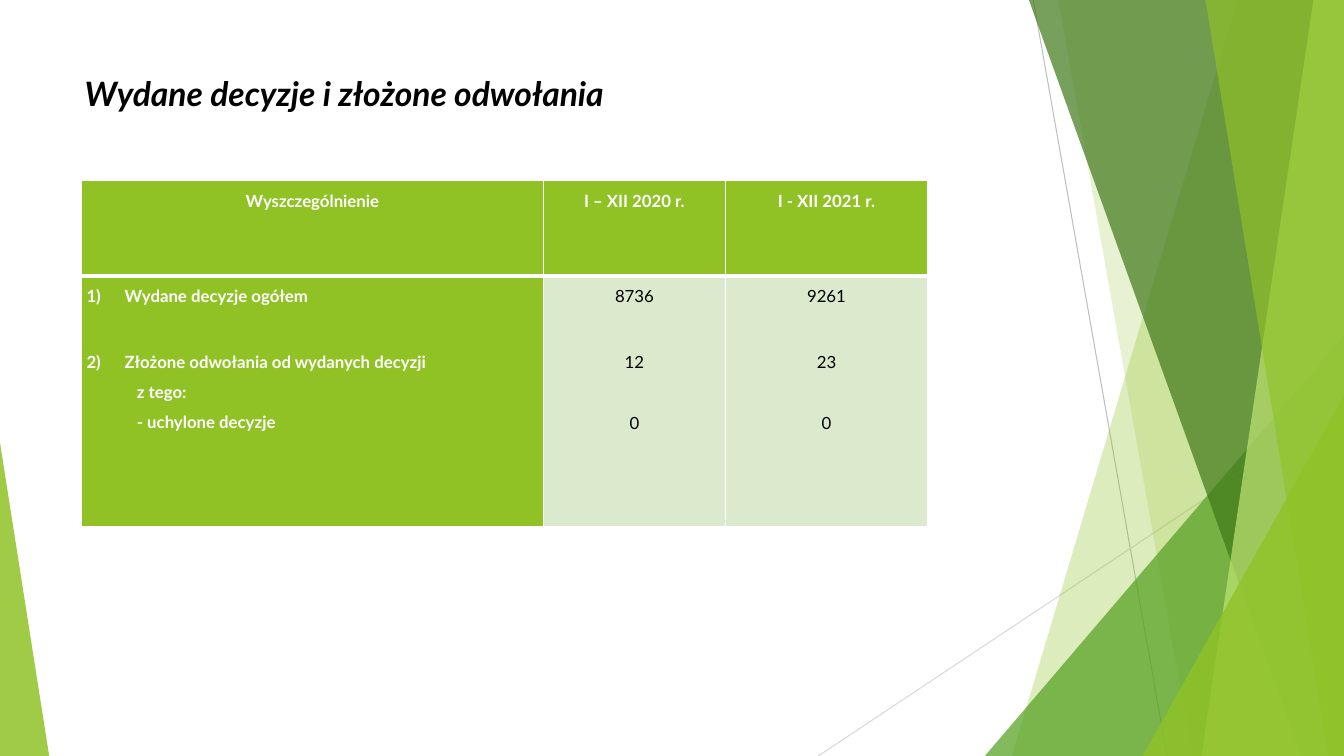
from lxml import etree
from pptx import Presentation
from pptx import util as u
from pptx.dml.color import RGBColor
from pptx.enum import shapes, text
from pptx.oxml import ns

Cm, Pt = u.Cm, u.Pt
WIDE, HIGH = 33.87, 19.05
FONT = "Lato"
HUES = {
    "white": "FFFFFF", "black": "000000", "lime": "90C226",
    "pale": "C0E474", "leaf": "54A021", "deep": "3F7819",
    "mint": "DBE9CD", "gray": "BFBFBF", "silver": "D9D9D9",
}

# Column heads, then the body of each column as (text, points above, style)
HEADS = ["Wyszczególnienie", "I – XII 2020 r.", "I - XII 2021 r."]
BODY = [
    [("Wydane decyzje ogółem", 0, "item"),
     ("Złożone odwołania od wydanych decyzji", 25, "item"),
     ("z tego:", 0, "sub"),
     ("- uchylone decyzje", 0, "sub")],
    [("8736", 0, "mid"), ("12", 25, "mid"), ("0", 22, "mid")],
    [("9261", 0, "mid"), ("23", 25, "mid"), ("0", 22, "mid")],
]


def color(name):
    return RGBColor.from_string(HUES[name])


def add_sub(parent, tag, **attrs):
    return etree.SubElement(parent, ns.qn(tag), attrs)


def tint(shape, hue, alpha):
    """Flat fill with an opacity in percent, no outline."""
    shape.shadow.inherit = False
    shape.line.fill.background()
    shape.fill.solid()
    shape.fill.fore_color.rgb = color(hue)
    rgb = shape.fill._xPr.find(".//" + ns.qn("a:srgbClr"))
    add_sub(rgb, "a:alpha", val=str(alpha * 1000))


def add_line(slide, start, end, hue):
    ends = [Cm(v) for v in start + end]
    line = slide.shapes.add_connector(shapes.MSO_CONNECTOR.STRAIGHT, *ends)
    line.line.color.rgb = color(hue)
    line.line.width = Pt(0.75)
    add_sub(line._element.spPr, "a:effectLst")


def add_band(slide, top, base, hue, alpha):
    """Full-height band from a slanted left edge to the slide's right edge."""
    form = slide.shapes.build_freeform(Cm(top), 0)
    form.add_line_segments([(Cm(WIDE), 0), (Cm(WIDE), Cm(HIGH)),
                            (Cm(base), Cm(HIGH))])
    tint(form.convert_to_shape(), hue, alpha)


def add_wedge(slide, left, top, width, peak, hue, alpha):
    """Triangle standing on the slide's bottom edge."""
    wedge = slide.shapes.add_shape(
        shapes.MSO_SHAPE.ISOSCELES_TRIANGLE,
        Cm(left), Cm(top), Cm(width), Cm(HIGH - top))
    wedge.adjustments[0] = peak
    tint(wedge, hue, alpha)


def style_run(run, size, hue, bold, italic=False):
    font = run.font
    font.name, font.size = FONT, Pt(size)
    font.bold, font.italic = bold, italic
    font.color.rgb = color(hue)


def add_title(slide, words):
    title = slide.shapes.title
    title.left, title.top = Cm(1.88), Cm(1.7)
    title.width, title.height = Cm(23.88), Cm(2.13)
    frame = title.text_frame
    frame.text = words
    frame.vertical_anchor = text.MSO_ANCHOR.TOP
    para = frame.paragraphs[0]
    para.alignment = text.PP_ALIGN.LEFT
    style_run(para.runs[0], 24, "black", True, True)


def set_edges(cell, top, base):
    props = cell._tc.get_or_add_tcPr()
    edges = [("L", 1), ("R", 1), ("T", top), ("B", base)]
    for spot, (side, width) in enumerate(edges):
        edge = etree.Element(ns.qn("a:ln" + side), w=str(Pt(width)))
        fill = add_sub(edge, "a:solidFill")
        add_sub(fill, "a:srgbClr", val=HUES["white"])
        props.insert(spot, edge)


def set_para(para, words, gap, style, hue, bold):
    para.text = words
    para.line_spacing = 1.5
    para.space_before = Pt(gap)
    style_run(para.runs[0], 12, hue, bold)
    if style == "mid":
        para.alignment = text.PP_ALIGN.CENTER
        return
    para.alignment = text.PP_ALIGN.JUSTIFY
    props = para._p.get_or_add_pPr()
    if style == "item":
        props.set("marL", str(Cm(0.96)))
        props.set("indent", str(-Cm(0.96)))
        add_sub(props, "a:buFont", typeface="+mj-lt")
        add_sub(props, "a:buAutoNum", type="arabicParenR")
    else:
        props.set("marL", str(Cm(1.27)))


def fill_cell(cell, lines, back, hue, bold):
    cell.margin_left = cell.margin_right = Cm(0.12)
    cell.margin_top = cell.margin_bottom = 0
    cell.fill.solid()
    cell.fill.fore_color.rgb = color(back)
    frame = cell.text_frame
    for num, (words, gap, style) in enumerate(lines):
        para = frame.add_paragraph() if num else frame.paragraphs[0]
        set_para(para, words, gap, style, hue, bold)


def add_grid(slide):
    cols, rows = [11.63, 4.6, 5.08], [2.41, 6.3]
    table = slide.shapes.add_table(
        len(rows), len(cols), Cm(2.06), Cm(4.55),
        Cm(sum(cols)), Cm(sum(rows))).table
    table.horz_banding = False
    for row, high in zip(table.rows, rows):
        row.height = Cm(high)
    for num, wide in enumerate(cols):
        table.columns[num].width = Cm(wide)
        head, body = table.cell(0, num), table.cell(1, num)
        fill_cell(head, [(HEADS[num], 0, "mid")], "lime", "white", True)
        look = ("mint", "black", False) if num else ("lime", "white", True)
        fill_cell(body, BODY[num], *look)
        set_edges(head, 1, 3)
        set_edges(body, 3, 1)


def add_decor(slide):
    add_line(slide, (26.04, 0), (29.41, HIGH), "gray")
    add_line(slide, (WIDE, 10.24), (20.62, HIGH), "silver")
    add_band(slide, 31.19, 25.5, "lime", 30)
    add_band(slide, 26.67, 30.05, "lime", 20)
    add_wedge(slide, 24.82, 8.46, 9.05, 1, "leaf", 72)
    add_band(slide, 25.93, 32.79, "deep", 70)
    add_band(slide, 33.1, 30.28, "pale", 70)
    add_band(slide, 30.38, 33.48, "lime", 65)
    add_wedge(slide, 28.8, 9.98, 5.07, 1, "lime", 80)
    add_wedge(slide, 0, 11.15, 1.24, 0, "lime", 85)


def main():
    deck = Presentation()
    deck.slide_width, deck.slide_height = Cm(WIDE), Cm(HIGH)
    slide = deck.slides.add_slide(deck.slide_layouts[5])
    add_decor(slide)
    add_title(slide, "Wydane decyzje i złożone odwołania")
    add_grid(slide)
    deck.save("out.pptx")


if __name__ == "__main__":
    main()
